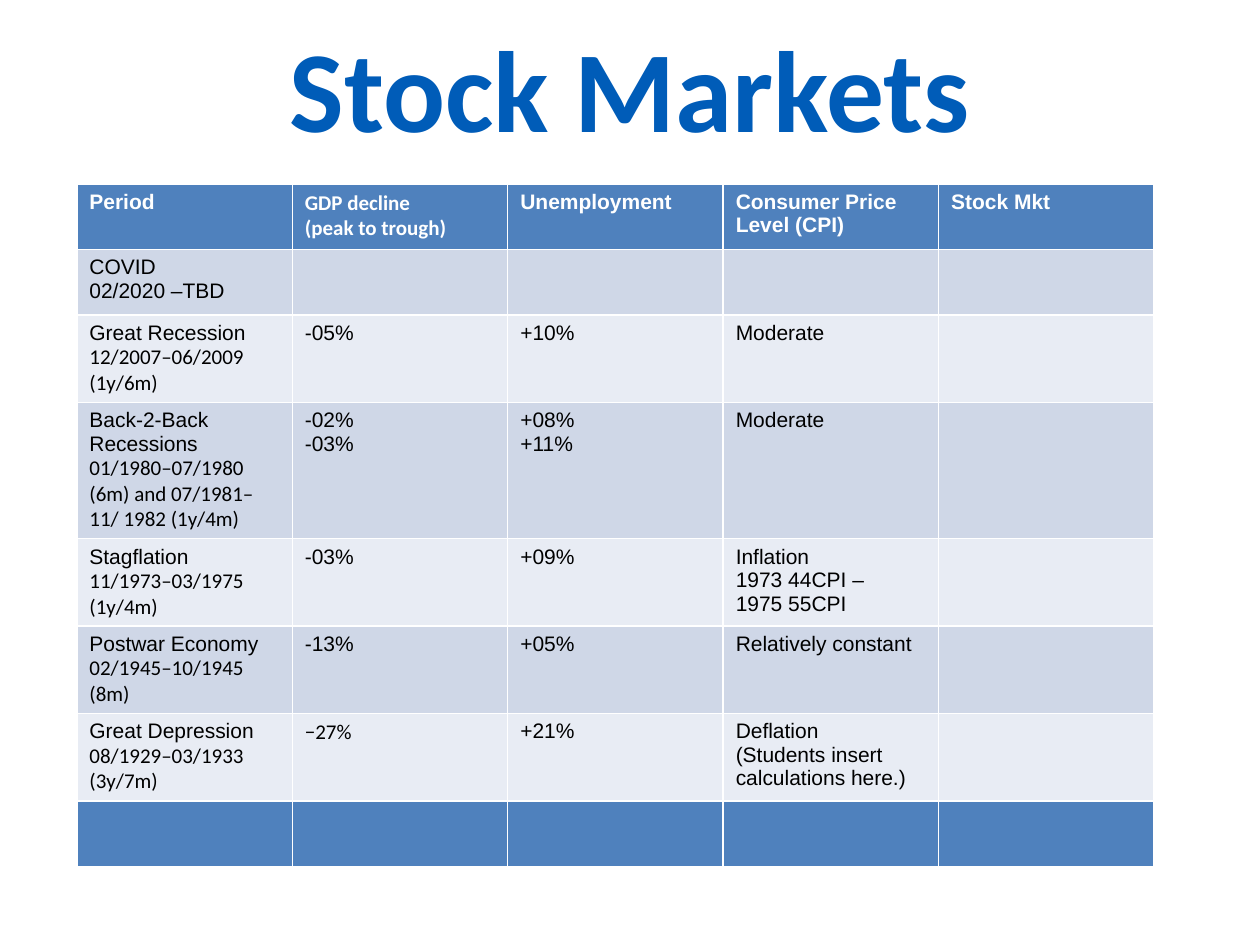
from pptx import Presentation
from pptx.dml.color import RGBColor
from pptx.enum.text import MSO_ANCHOR, MSO_AUTO_SIZE, PP_ALIGN
from pptx.util import Inches, Pt

BLUE, WHITE, BLACK = "4F81BD", "FFFFFF", "000000"
BANDS = ["CFD7E7", "E8ECF4"]


def arial(*lines):
    return [(line, "Arial") for line in lines]


def calibri(*lines):
    return [(line, "Calibri") for line in lines]


def period(name, dates):
    return arial(name) + calibri(dates)


HEADINGS = [
    arial("Period"),
    calibri("GDP decline", "(peak to trough)"),
    arial("Unemployment"),
    arial("Consumer Price Level (CPI)"),
    arial("Stock Mkt"),
]

DOWNTURNS = [
    [arial("COVID", "02/2020 –TBD")],
    [period("Great Recession", "12/2007–06/2009 (1y/6m)"),
     arial("-05%"), arial("+10%"), arial("Moderate")],
    [period("Back-2-Back Recessions",
            "01/1980–07/1980 (6m) and 07/1981–11/ 1982 (1y/4m)"),
     arial("-02%", "-03%"), arial("+08%", "+11%"), arial("Moderate")],
    [period("Stagflation", "11/1973–03/1975 (1y/4m)"),
     arial("-03%"), arial("+09%"),
     arial("Inflation", "1973 44CPI –", "1975 55CPI")],
    [period("Postwar Economy", "02/1945–10/1945 (8m)"),
     arial("-13%"), arial("+05%"), arial("Relatively constant")],
    [period("Great Depression", "08/1929–03/1933 (3y/7m)"),
     calibri("−27%"), arial("+21%"),
     arial("Deflation", "(Students insert calculations here.)")],
]


def color(hex_code):
    return RGBColor.from_string(hex_code)


def style_font(paragraph, name, size, hex_code, bold):
    font = paragraph.font
    font.name = name
    font.size = Pt(size)
    font.bold = bold
    font.color.rgb = color(hex_code)


def add_title(slide, text):
    title = slide.shapes.title
    title.left, title.top = Inches(0.5), Inches(0.14)
    title.width, title.height = Inches(9), Inches(1.25)
    frame = title.text_frame
    frame.text = text
    frame.auto_size = MSO_AUTO_SIZE.NONE
    frame.vertical_anchor = MSO_ANCHOR.MIDDLE
    heading = frame.paragraphs[0]
    heading.alignment = PP_ALIGN.CENTER
    heading.line_spacing = 0.86
    style_font(heading, "Calibri", 66, "005CB8", True)


def fill_row(row, contents, background, text_color, bold):
    for cell in row.cells:
        cell.fill.solid()
        cell.fill.fore_color.rgb = color(background)
    for cell, lines in zip(row.cells, contents):
        frame = cell.text_frame
        frame.text = "\n".join(text for text, _ in lines)
        for paragraph, (_, font_name) in zip(frame.paragraphs, lines):
            style_font(paragraph, font_name, 12, text_color, bold)


def add_downturn_table(slide):
    row_count, column_count = len(DOWNTURNS) + 2, len(HEADINGS)
    table = slide.shapes.add_table(
        row_count, column_count, Inches(0.61), Inches(1.46),
        Inches(1.71 * column_count), Inches(0.52 * row_count)).table
    table.last_row = True
    header, *body, footer = table.rows
    fill_row(header, HEADINGS, BLUE, WHITE, True)
    for index, (row, contents) in enumerate(zip(body, DOWNTURNS)):
        fill_row(row, contents, BANDS[index % 2], BLACK, False)
    fill_row(footer, [], BLUE, WHITE, True)


def main():
    deck = Presentation()
    deck.slide_width, deck.slide_height = Inches(10), Inches(7.5)
    slide = deck.slides.add_slide(deck.slide_layouts[5])
    add_title(slide, "Stock Markets")
    add_downturn_table(slide)
    deck.save("out.pptx")


if __name__ == "__main__":
    main()
